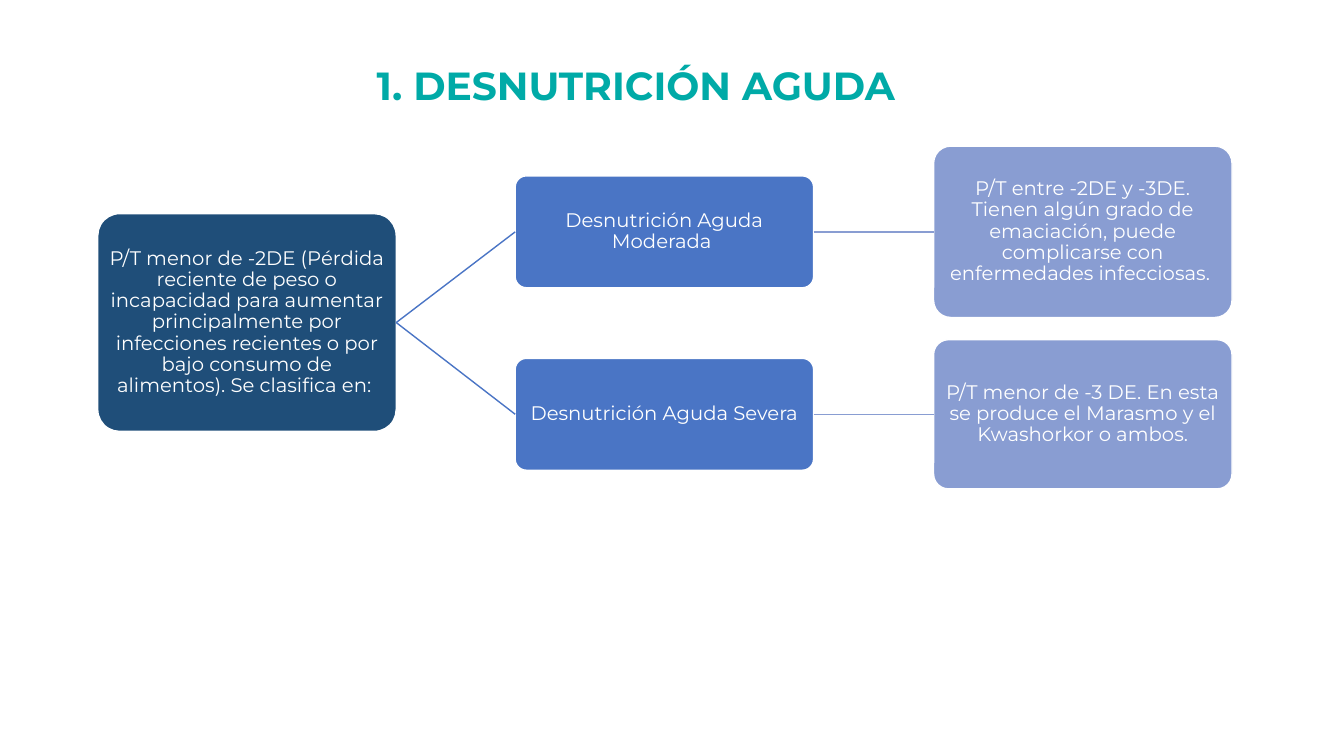
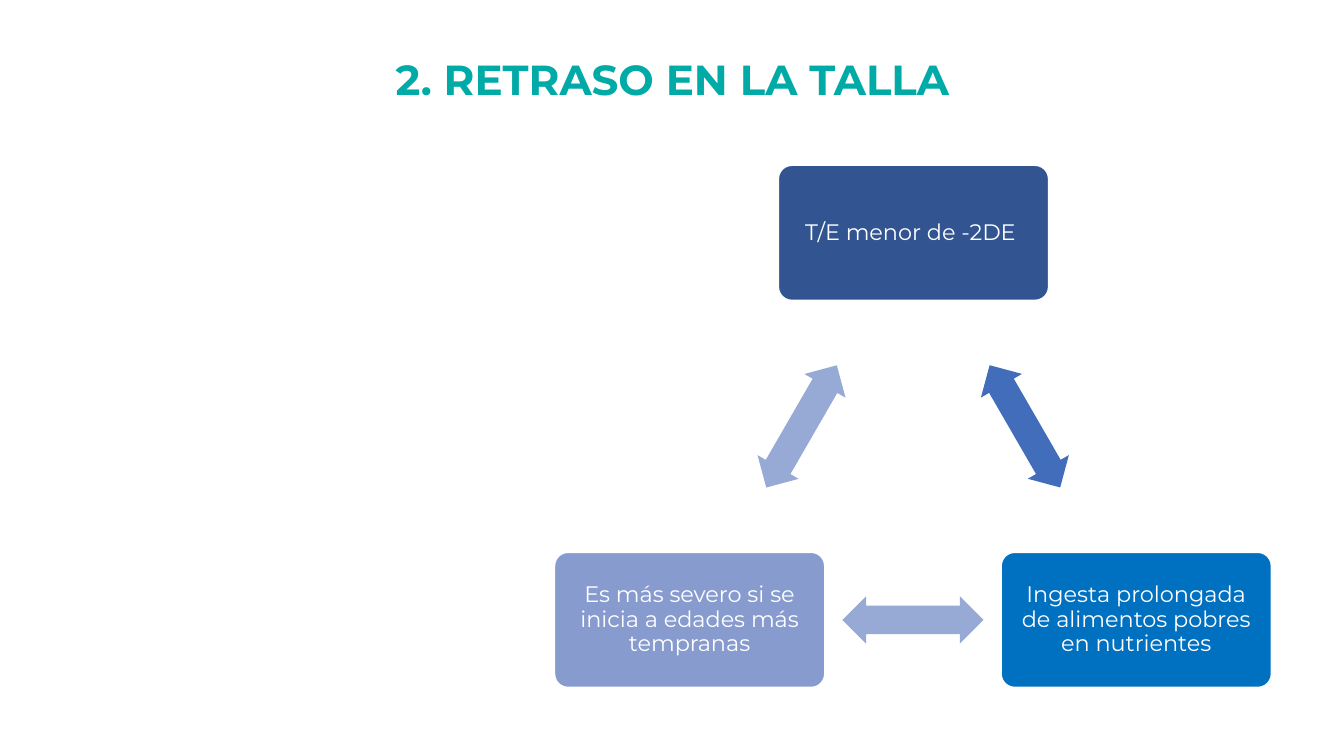
"""Build two slides on child malnutrition: a classification tree and a cycle."""
from dataclasses import dataclass

from lxml.etree import SubElement
from pptx import Presentation
from pptx.dml.color import RGBColor
from pptx.enum.shapes import MSO_CONNECTOR as CONN, MSO_SHAPE as SHAPE
from pptx.enum.text import MSO_ANCHOR as ANCHOR, MSO_AUTO_SIZE as FIT, PP_ALIGN as ALIGN
from pptx.oxml.ns import qn
from pptx.util import Emu, Pt

PX = 9144
FONT = "Montserrat"
COLORS = {
    "white": "FFFFFF", "teal": "00AAA7", "navy": "1F4E79", "blue": "4A75C5",
    "pale": "899DD2", "indigo": "325491", "azure": "0070C0", "lavender": "879BCE",
    "arrow_blue": "416DBB", "arrow_pale": "97A9D5",
}


@dataclass(frozen=True)
class Box:
    """A rounded box placed by its centre, in px."""
    text: str
    cx: int
    cy: int
    w: int
    h: int
    color: str


@dataclass(frozen=True)
class Branch:
    """A class of malnutrition and its description."""
    kind: Box
    detail: Box


def px(n: float) -> Emu:
    """Turn px into EMU."""
    return Emu(round(n * PX))


def rgb(name: str) -> RGBColor:
    """Look up a colour by name."""
    return RGBColor.from_string(COLORS[name])


def write(tf, text: str, *, size: int, color: str = "white", bold: bool = False,
          spacing: float = 1.0, inset: int | None = None) -> None:
    """Put one centred, formatted paragraph in a text frame."""
    tf.word_wrap = True
    tf.auto_size = FIT.NONE
    tf.vertical_anchor = ANCHOR.MIDDLE
    if inset is not None:
        tf.margin_left = tf.margin_right = tf.margin_top = tf.margin_bottom = px(inset)
    p = tf.paragraphs[0]
    p.alignment = ALIGN.CENTER
    p.line_spacing = spacing
    r = p.add_run()
    r.text = text
    r.font.name, r.font.size, r.font.bold = FONT, Pt(size), bold
    r.font.color.rgb = rgb(color)


def add_slide(prs, title: str, x: int, y: int, h: int, size: int):
    """Add a slide with its teal title."""
    s = prs.slides.add_slide(prs.slide_layouts[5])
    sp = s.shapes.title
    sp.left, sp.top, sp.width, sp.height = px(x), px(y), px(632), px(h)
    write(sp.text_frame, title, size=size, color="teal", bold=True)
    return s


def add_centered(s, kind, cx: float, cy: float, w: int, h: int, color: str):
    """Add a filled shape around a centre point."""
    sp = s.shapes.add_shape(kind, px(cx - w / 2), px(cy - h / 2), px(w), px(h))
    sp.shadow.inherit = False
    sp.fill.solid()
    sp.fill.fore_color.rgb = rgb(color)
    return sp


def add_box(s, box: Box, size: int, inset: int):
    """Draw a rounded box with its text."""
    sp = add_centered(s, SHAPE.ROUNDED_RECTANGLE, box.cx, box.cy, box.w, box.h, box.color)
    sp.adjustments[0] = 0.1
    sp.line.color.rgb = rgb("white")
    sp.line.width = Pt(1)
    write(sp.text_frame, box.text, size=size, spacing=0.9, inset=inset)
    return sp


def add_link(s, start, end, color: str) -> None:
    """Join the right side of one box to the left side of another."""
    c = s.shapes.add_connector(CONN.STRAIGHT, 0, 0, 0, 0)
    c.begin_connect(start, 3)
    c.end_connect(end, 1)
    c.line.color.rgb = rgb(color)
    c.line.width = Pt(1)
    SubElement(c._element.spPr, qn("a:effectLst"))


def add_arrow(s, a: Box, b: Box, angle: int, color: str) -> None:
    """Draw a double arrow midway between two boxes."""
    sp = add_centered(s, SHAPE.LEFT_RIGHT_ARROW, (a.cx + b.cx) / 2, (a.cy + b.cy) / 2,
                      140, 47, color)
    sp.adjustments[0], sp.adjustments[1] = 0.6, 0.5
    sp.rotation = angle
    sp.line.fill.background()


def build_acute(prs) -> None:
    """Build the tree of acute malnutrition."""
    s = add_slide(prs, "1. DESNUTRICIÓN AGUDA ", 320, 56, 57, 28)
    root = Box("P/T menor de -2DE (Pérdida reciente de peso o incapacidad para aumentar "
               "principalmente por infecciones recientes o por bajo consumo de alimentos). "
               "Se clasifica en: ", 245, 320, 296, 216, "navy")
    branches = [
        Branch(Box("Desnutrición Aguda Moderada ", 659, 230, 296, 111, "blue"),
               Box("P/T entre -2DE y -3DE. Tienen algún grado de emaciación, puede "
                   "complicarse con enfermedades infecciosas. ", 1074, 230, 296, 170, "pale")),
        Branch(Box("Desnutrición Aguda Severa", 659, 411, 296, 111, "blue"),
               Box("P/T menor de -3 DE. En esta se produce el Marasmo y el Kwashorkor o "
                   "ambos.", 1074, 411, 296, 148, "pale")),
    ]
    top = add_box(s, root, 14, 1)
    for branch in branches:
        parent = top
        for box in (branch.kind, branch.detail):
            child = add_box(s, box, 14, 1)
            add_link(s, parent, child, box.color)
            parent = child


def build_stunting(prs) -> None:
    """Build the cycle of stunted growth."""
    s = add_slide(prs, "2. RETRASO EN LA TALLA", 351, 48, 61, 30)
    boxes = [
        Box("T/E menor de -2DE ", 906, 231, 268, 134, "indigo"),
        Box("Ingesta prolongada de alimentos pobres en nutrientes",
            1127, 615, 268, 134, "azure"),
        Box("Es más severo si se inicia a edades más tempranas",
            684, 615, 268, 134, "lavender"),
    ]
    arrow_colors = ["arrow_blue", "arrow_pale", "arrow_pale"]
    for i, (box, color) in enumerate(zip(boxes, arrow_colors)):
        add_box(s, box, 16, 7)
        add_arrow(s, box, boxes[(i + 1) % len(boxes)], 60 + 120 * i, color)


def main() -> None:
    """Build and save the presentation."""
    prs = Presentation()
    prs.slide_width, prs.slide_height = px(1333), px(750)
    build_acute(prs)
    build_stunting(prs)
    prs.save("out.pptx")


if __name__ == "__main__":
    main()
